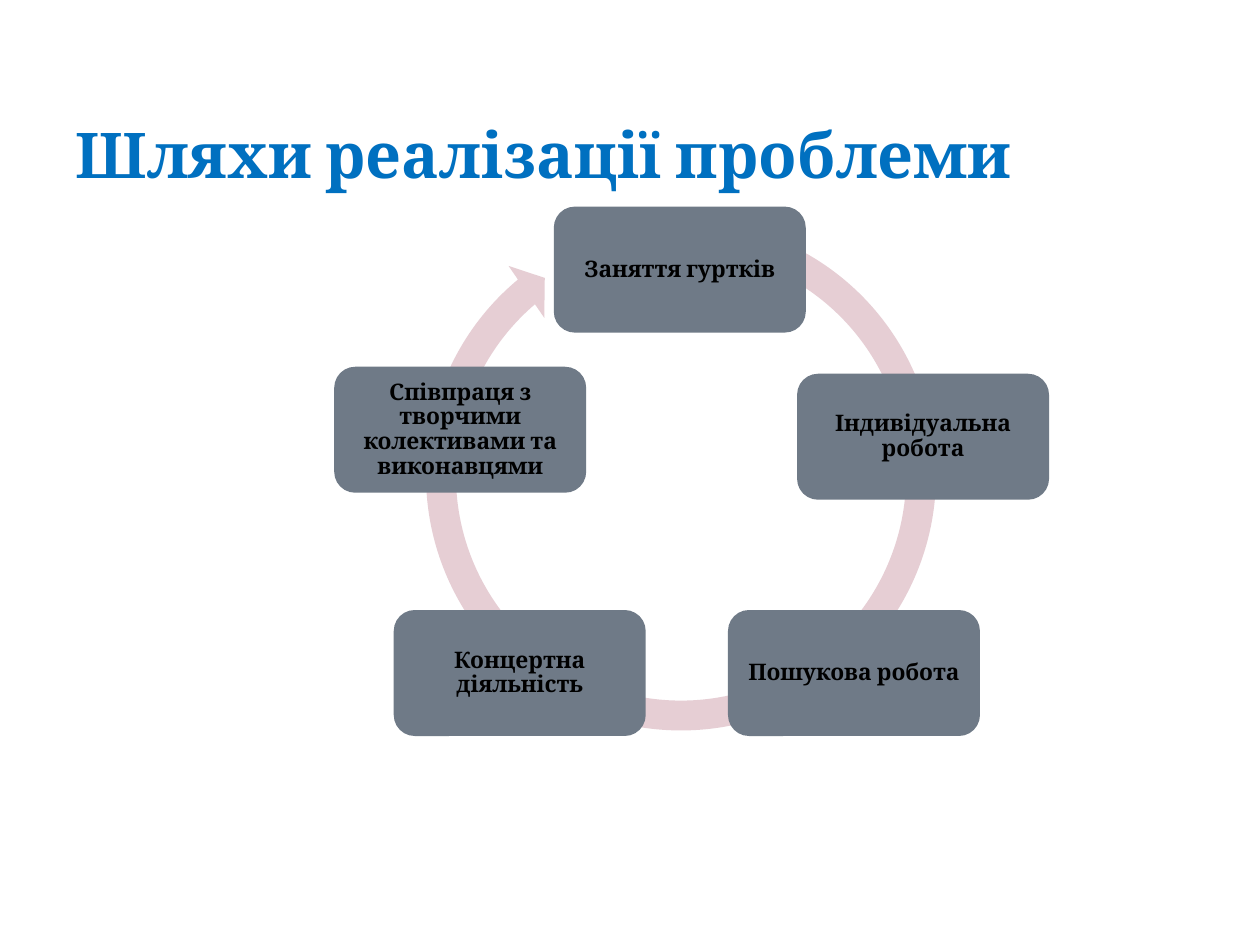
from pptx import Presentation
from pptx.dml.color import RGBColor
from pptx.enum.shapes import MSO_SHAPE
from pptx.enum.text import MSO_ANCHOR, PP_ALIGN
from pptx.util import Pt

ROUNDED = MSO_SHAPE.ROUNDED_RECTANGLE
CIRCULAR_ARROW = MSO_SHAPE.CIRCULAR_ARROW
BOTTOM, MIDDLE = MSO_ANCHOR.BOTTOM, MSO_ANCHOR.MIDDLE
LEFT, CENTER = PP_ALIGN.LEFT, PP_ALIGN.CENTER

FONT = "Cambria"
RING_ADJUSTMENTS = (0.055, 3.307, 137.947, 173.745, 0.058)
STEP_W, STEP_H = 144, 72
# Step text and its left and top offset inside the diagram
STEPS = [
    ("Заняття гуртків", 126, 1.5),
    ("Індивідуальна робота", 265, 97),
    ("Пошукова робота", 225.5, 232),
    ("Концертна діяльність", 34.5, 232),
    ("Співпраця з творчими колективами та виконавцями", 0.5, 93),
]


def color(value):
    return RGBColor.from_string(value)


def set_all(obj, values):
    for name, value in values.items():
        setattr(obj, name, value)


def write(sp, text, size, text_color, frame_format, paragraph_format):
    tf = sp.text_frame
    set_all(tf, {"word_wrap": True, **frame_format})
    p = tf.paragraphs[0]
    set_all(p, paragraph_format)
    r = p.add_run()
    r.text = text
    set_all(r.font, {"name": FONT, "size": Pt(size), "bold": True})
    r.font.color.rgb = color(text_color)


def add_filled(s, kind, box, fill):
    sp = s.shapes.add_shape(kind, *map(Pt, box))
    sp.shadow.inherit = False
    sp.fill.solid()
    sp.fill.fore_color.rgb = color(fill)
    sp.line.fill.background()
    return sp


def place_title(s, left, top, width, height):
    title = s.shapes.title
    set_all(title, {"left": Pt(left), "top": Pt(top),
                    "width": Pt(width), "height": Pt(height)})
    write(title, "Шляхи реалізації проблеми", 36, "0070C0",
          {"vertical_anchor": BOTTOM}, {"alignment": LEFT})


def place_cycle(s, left, top, size):
    # Ring arrow behind the steps
    ring = add_filled(s, CIRCULAR_ARROW, (left + 43.5, top, size, size), "E6CED4")
    for i, value in enumerate(RING_ADJUSTMENTS):
        ring.adjustments[i] = value

    # Steps, clockwise from the top
    insets = {f"margin_{side}": Pt(3.6)
              for side in ("left", "top", "right", "bottom")}
    for text, dx, dy in STEPS:
        step = add_filled(s, ROUNDED, (left + dx, top + dy, STEP_W, STEP_H), "6F7A87")
        write(step, text, 13, "000000", {"vertical_anchor": MIDDLE, **insets},
              {"alignment": CENTER, "line_spacing": 0.9})


def main():
    prs = Presentation()
    prs.slide_width, prs.slide_height = Pt(720), Pt(540)
    s = prs.slides.add_slide(prs.slide_layouts[5])
    place_title(s, 36, 21.6, 605.5, 91.4)
    place_cycle(s, 190.5, 116.6, 310.3)
    prs.save("out.pptx")


if __name__ == "__main__":
    main()
